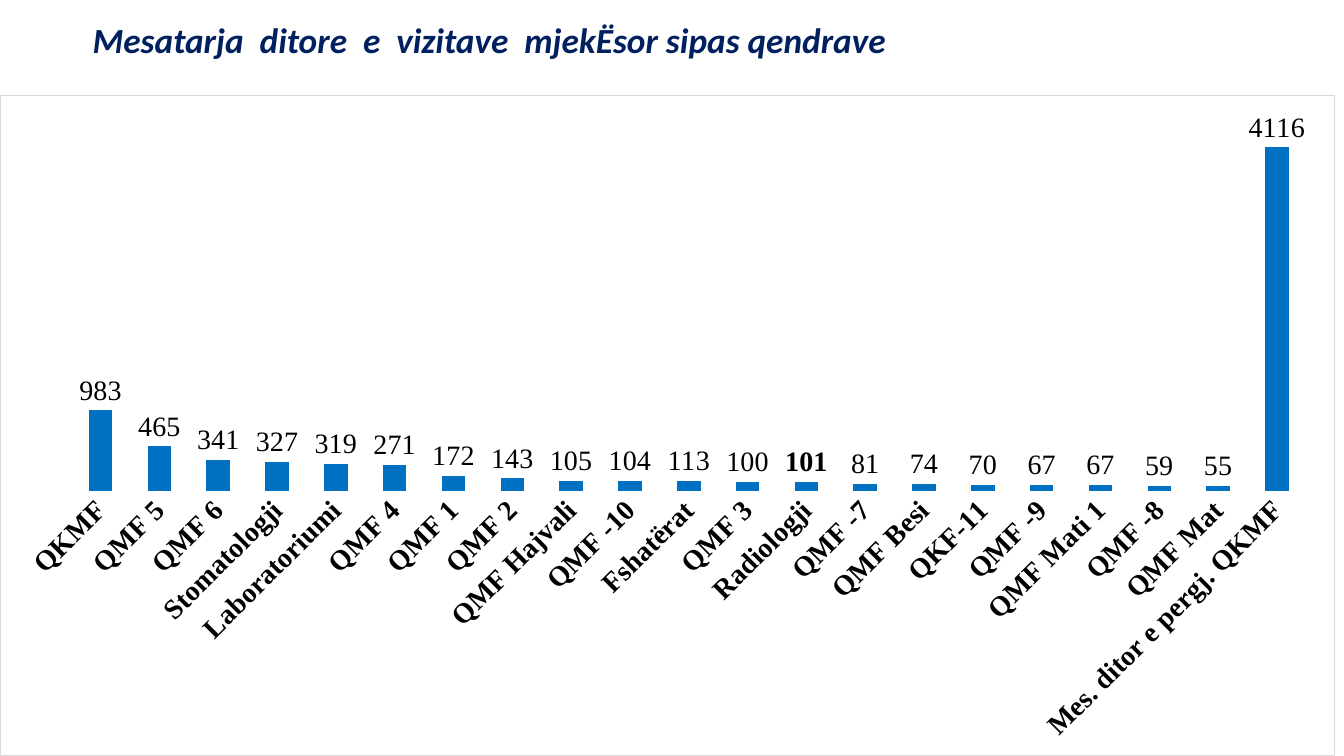
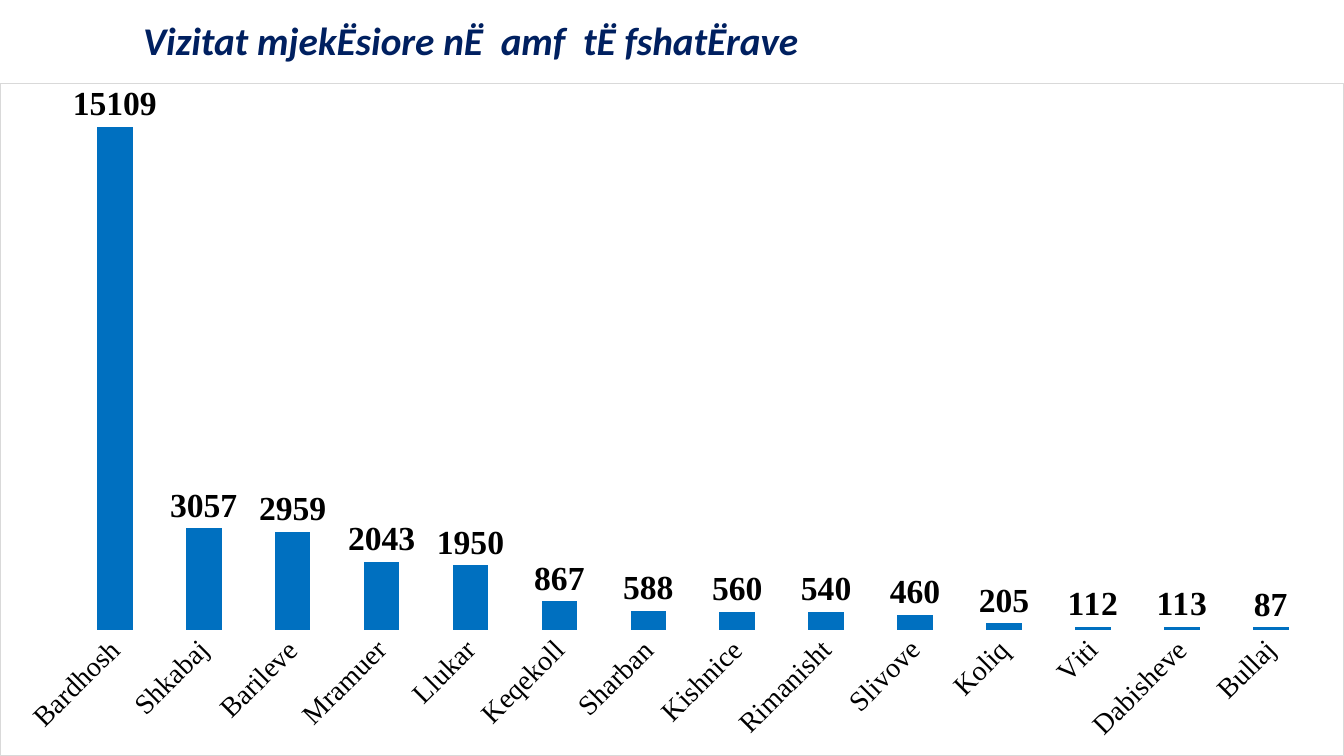
from dataclasses import dataclass

from lxml import etree
from pptx import Presentation
from pptx import slide as sl
from pptx import util as u
from pptx.chart import chart as ch
from pptx.chart.data import CategoryChartData
from pptx.dml.color import RGBColor
from pptx.enum import chart as ce
from pptx.enum import text
from pptx.oxml import parse_xml
from pptx.oxml.ns import qn

NAVY = RGBColor(0x00, 0x20, 0x60)
BLUE = RGBColor(0x00, 0x70, 0xC0)
BLACK = RGBColor(0x00, 0x00, 0x00)
GREY = RGBColor(0xD9, 0xD9, 0xD9)
HEAD = "Calibri"
BODY = "Times New Roman"
TILT = -45

BORDER = (
    '<c:spPr xmlns:c="http://schemas.openxmlformats.org/drawingml/2006/chart" '
    'xmlns:a="http://schemas.openxmlformats.org/drawingml/2006/main">'
    '<a:noFill/><a:ln w="9525"><a:solidFill>'
    f'<a:srgbClr val="{GREY}"/></a:solidFill></a:ln></c:spPr>'
)


@dataclass
class Box:
    x: float
    y: float
    w: float
    h: float

    def place(self) -> tuple:
        return tuple(u.Inches(n) for n in (self.x, self.y, self.w, self.h))


@dataclass
class Bar:
    name: str
    value: int
    label: str = ""


@dataclass
class Page:
    title: str
    size: float
    head: Box
    area: Box
    plot: Box
    top: int
    bars: list[Bar]
    bold: bool
    digits: int


PAGES = [
    Page(
        "Mesatarja  ditore  e  vizitave  mjekËsor sipas qendrave", 25.2,
        Box(0.82, 0.15, 11.59, 0.54), Box(0, 0.94, 13.24, 6.56),
        Box(0.053, 0.021, 0.926, 0.578), 4500,
        [
            Bar("QKMF", 946, "983"),
            Bar("QMF 5", 522, "465"),
            Bar("QMF 6", 363, "341"),
            Bar("Stomatologji", 336, "327"),
            Bar("Laboratoriumi", 318, "319"),
            Bar("QMF 4", 305, "271"),
            Bar("QMF 1", 176, "172"),
            Bar("QMF 2", 145, "143"),
            Bar("QMF Hajvali", 114, "105"),
            Bar("QMF -10", 114, "104"),
            Bar("Fshatërat", 116, "113"),
            Bar("QMF 3", 104, "100"),
            Bar("Radiologji", 101),
            Bar("QMF -7", 83, "81"),
            Bar("QMF Besi", 81, "74"),
            Bar("QKF-11", 72, "70"),
            Bar("QMF -9", 70, "67"),
            Bar("QMF Mati 1", 69, "67"),
            Bar("QMF -8", 60, "59"),
            Bar("QMF Mat", 57, "55"),
            Bar("Mes. ditor e pergj. QKMF", 4048, "4116"),
        ],
        True, 20,
    ),
    Page(
        "Vizitat mjekËsiore nË  amf  tË fshatËrave", 28,
        Box(1.32, 0, 12.01, 0.85), Box(0, 0.82, 13.33, 6.68),
        Box(0.052, 0.021, 0.927, 0.793), 16000,
        [
            Bar("Bardhosh", 15109),
            Bar("Shkabaj", 3057),
            Bar("Barileve", 2959),
            Bar("Mramuer", 2043),
            Bar("Llukar", 1950),
            Bar("Keqekoll", 867),
            Bar("Sharban", 588),
            Bar("Kishnice", 560),
            Bar("Rimanisht", 540),
            Bar("Slivove", 460),
            Bar("Koliq", 205),
            Bar("Viti", 112),
            Bar("Dabisheve", 113),
            Bar("Bullaj", 87),
        ],
        False, 24,
    ),
]


def style(font: text, size: float, *, face: str = BODY, bold: bool = False,
          slant: bool = False, color: RGBColor = BLACK) -> None:
    font.name = face
    font.size = u.Pt(size)
    font.bold = bold
    font.italic = slant
    font.color.rgb = color


def write(page: sl.Slide, words: str, box: Box, size: float, **form) -> None:
    frame = page.shapes.add_textbox(*box.place()).text_frame
    frame.word_wrap = True
    frame.vertical_anchor = text.MSO_ANCHOR.MIDDLE
    line = frame.paragraphs[0]
    line.line_spacing = 0.9
    run = line.add_run()
    run.text = words
    style(run.font, size, **form)


def fit(chart: ch.Chart, plot: Box) -> None:
    area = chart._chartSpace.find(".//" + qn("c:plotArea"))
    for old in area.findall(qn("c:layout")):
        area.remove(old)
    outer = etree.Element(qn("c:layout"))
    inner = etree.SubElement(outer, qn("c:manualLayout"))
    rules = {"layoutTarget": "inner", "xMode": "edge", "yMode": "edge",
             "x": plot.x, "y": plot.y, "w": plot.w, "h": plot.h}
    for tag, val in rules.items():
        etree.SubElement(inner, qn(f"c:{tag}")).set("val", str(val))
    area.insert(0, outer)


def frame(chart: ch.Chart) -> None:
    chart._chartSpace.find(qn("c:chart")).addnext(parse_xml(BORDER))


def axes(chart: ch.Chart, top: int, bold: bool) -> None:
    names = chart.category_axis
    names.major_tick_mark = ce.XL_TICK_MARK.NONE
    names.format.line.fill.background()
    style(names.tick_labels.font, 20, bold=bold)
    body = names._element.find(qn("c:txPr")).find(qn("a:bodyPr"))
    body.set("rot", str(TILT * 60000))
    body.set("vert", "horz")
    scale = chart.value_axis
    scale.has_major_gridlines = False
    scale.minimum_scale = 0
    scale.maximum_scale = top
    scale.visible = False


def labels(chart: ch.Chart, bars: list[Bar], size: int) -> None:
    row = chart.plots[0].series[0]
    tags = row.data_labels
    tags.show_value = True
    tags.number_format = "0"
    tags.number_format_is_linked = False
    tags.position = ce.XL_LABEL_POSITION.OUTSIDE_END
    style(tags.font, size, bold=True)
    for spot, bar in enumerate(bars):
        if bar.label:
            tag = row.points[spot].data_label
            run = tag.text_frame.paragraphs[0].add_run()
            run.text = bar.label
            style(run.font, size)
            tag.position = ce.XL_LABEL_POSITION.OUTSIDE_END


def graph(page: sl.Slide, item: Page) -> None:
    data = CategoryChartData(number_format="0")
    data.categories = [bar.name for bar in item.bars]
    data.add_series("Series 1", [bar.value for bar in item.bars])
    chart = page.shapes.add_chart(
        ce.XL_CHART_TYPE.COLUMN_CLUSTERED, *item.area.place(), data).chart
    chart.has_title = False
    chart.has_legend = False
    style(chart.font, 10, face=HEAD)
    plot = chart.plots[0]
    plot.gap_width = 150
    plot.overlap = -25
    plot.vary_by_categories = False
    fill = plot.series[0].format.fill
    fill.solid()
    fill.fore_color.rgb = BLUE
    axes(chart, item.top, item.bold)
    labels(chart, item.bars, item.digits)
    fit(chart, item.plot)
    frame(chart)


def main() -> None:
    deck = Presentation()
    deck.slide_width = u.Inches(13.33)
    deck.slide_height = u.Inches(7.5)
    for item in PAGES:
        page = deck.slides.add_slide(deck.slide_layouts[6])
        write(page, item.title, item.head, item.size,
              face=HEAD, bold=True, slant=True, color=NAVY)
        graph(page, item)
    deck.save("out.pptx")


if __name__ == "__main__":
    main()
